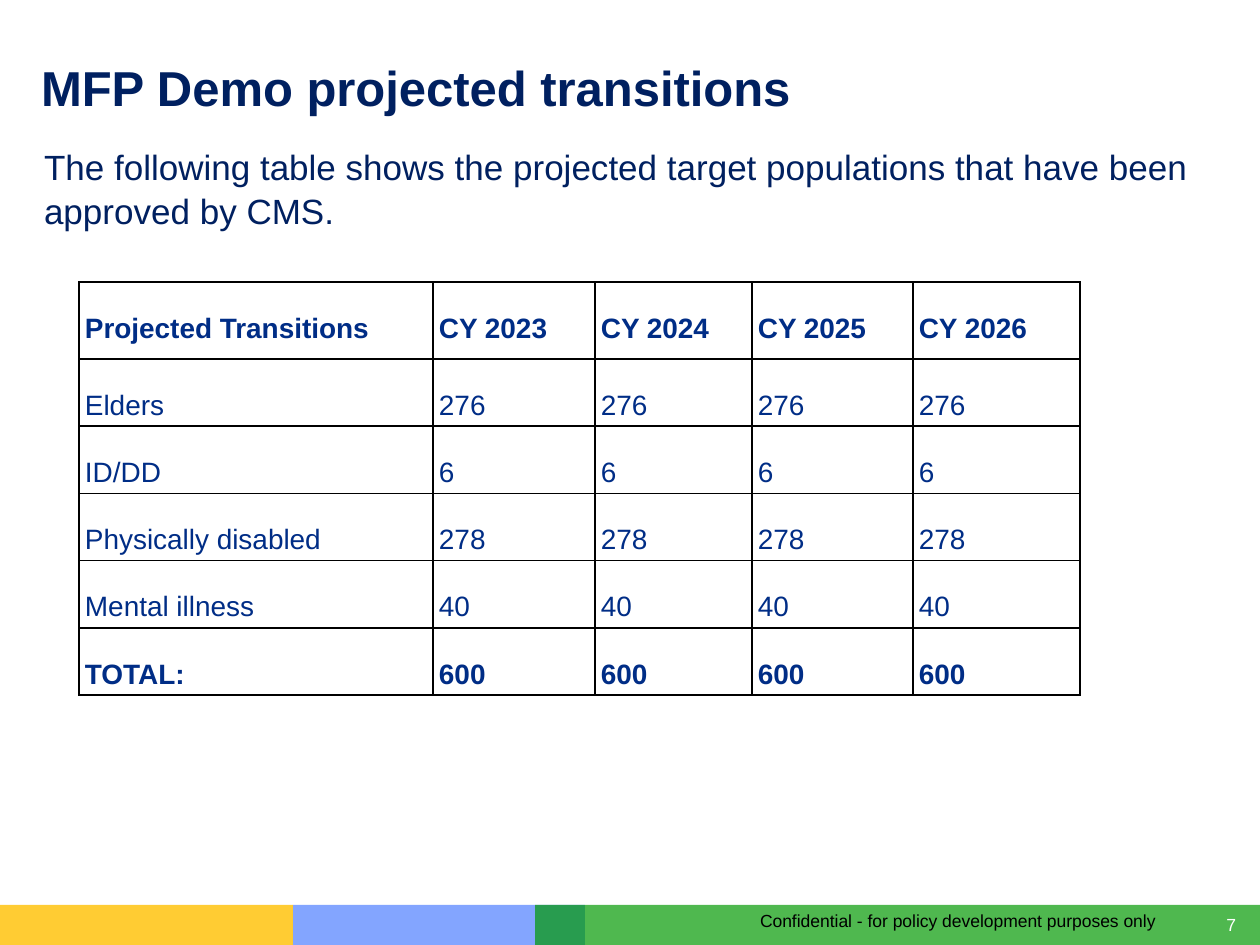
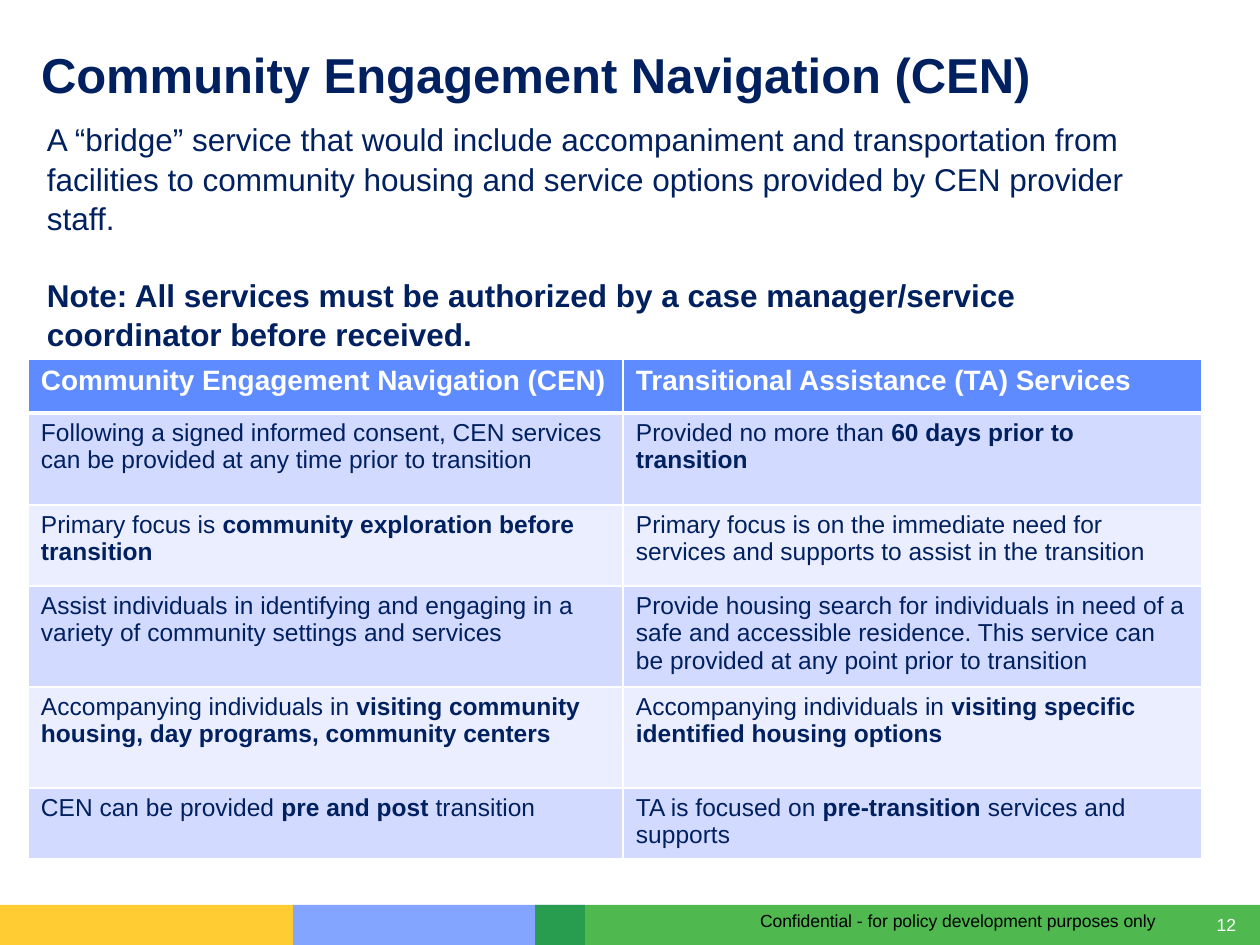
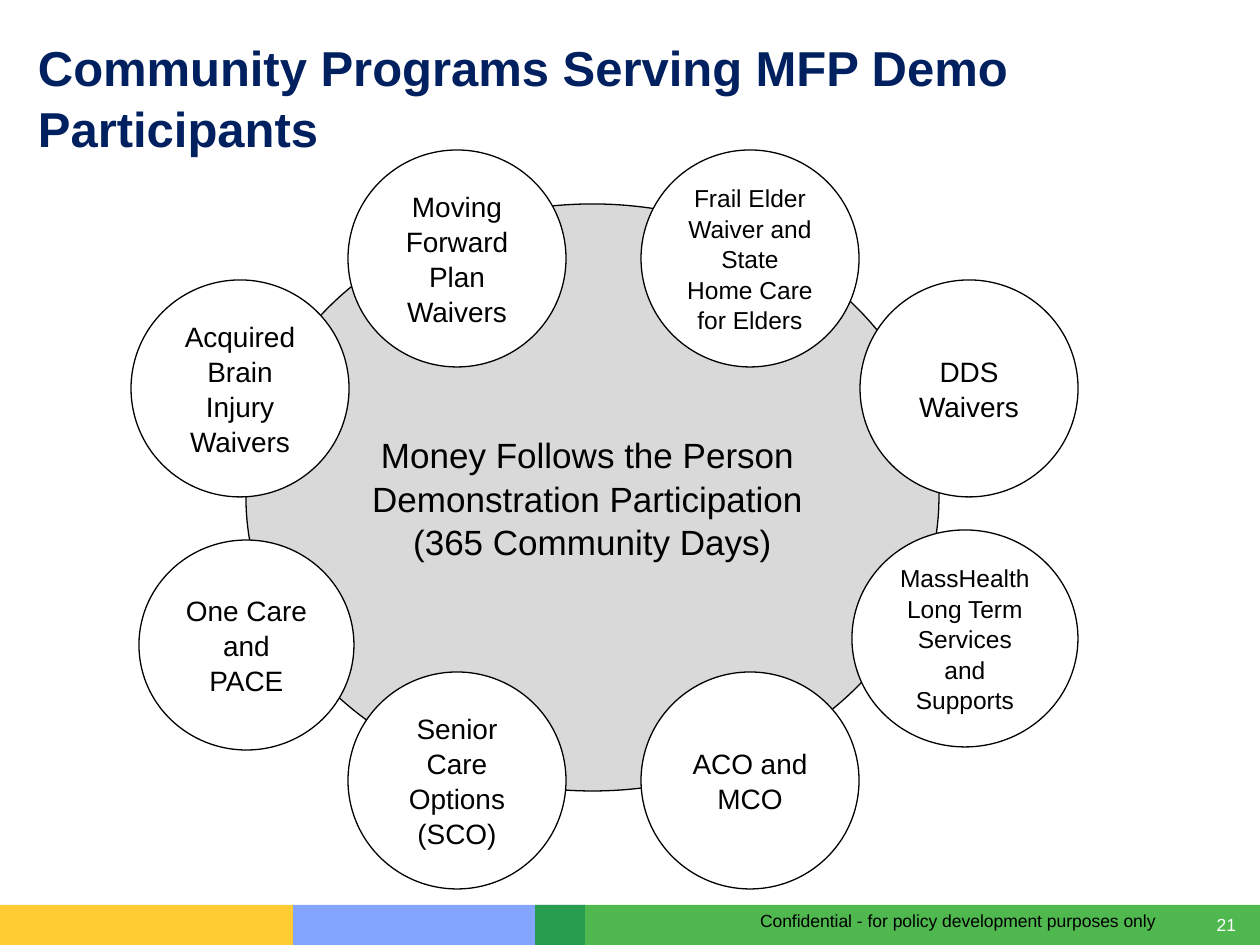
"""Build three slides on the MFP Demo: transitions, services and programs."""
from lxml import etree
from pptx import Presentation
from pptx.dml.color import RGBColor
from pptx.enum.shapes import MSO_SHAPE
from pptx.enum.text import MSO_ANCHOR, PP_ALIGN
from pptx.oxml.ns import qn
from pptx.util import Emu, Pt

RECTANGLE, ELLIPSE = MSO_SHAPE.RECTANGLE, MSO_SHAPE.OVAL
TOP, MIDDLE = MSO_ANCHOR.TOP, MSO_ANCHOR.MIDDLE
LEFT, CENTER, RIGHT = PP_ALIGN.LEFT, PP_ALIGN.CENTER, PP_ALIGN.RIGHT

NAVY = RGBColor(0x00, 0x20, 0x60)
ROYAL = RGBColor(0x00, 0x2D, 0x86)
BLUE = RGBColor(0x5E, 0x8B, 0xFF)
YELLOW = RGBColor(0xFF, 0xC0, 0x00)
GREEN = RGBColor(0x00, 0x99, 0x00)
PALE = RGBColor(0xD2, 0xDA, 0xFF)
PALER = RGBColor(0xEA, 0xEE, 0xFF)
GRAY = RGBColor(0xD9, 0xD9, 0xD9)
BLACK = RGBColor(0x00, 0x00, 0x00)
WHITE = RGBColor(0xFF, 0xFF, 0xFF)

FONT = "Arial"
PX_PER_INCH = 126
SLIDE_WIDTH, SLIDE_HEIGHT = 1260, 945
BAND_TOP, BAND_HEIGHT = 905, 40
LOOSE = 1.04
BODY_INSETS = (13, 8, 13, 6)
CELL_INSETS = (13, 6, 13, 6)

BANDS = [(293, 292, BLUE, 77), (0, 293, YELLOW, 80), (535, 725, GREEN, 69)]

YEARS = ["CY 2023", "CY 2024", "CY 2025", "CY 2026"]
TRANSITIONS = [("Elders", "276"), ("ID/DD", "6"), ("Physically disabled", "278"),
               ("Mental illness", "40"), ("*TOTAL:*", "*600*")]

SERVICES = [
    ("*Community Engagement Navigation (CEN)*",
     "*Transitional Assistance (TA) Services*"),
    ("Following a signed informed consent, CEN services can be provided at any time "
     "prior to transition",
     "Provided no more than *60 days prior to transition*"),
    ("Primary focus is *community exploration before transition*",
     "Primary focus is on the immediate need for services and supports to assist "
     "in the transition"),
    ("Assist individuals in identifying and engaging in a variety of community "
     "settings and services",
     "Provide housing search for individuals in need of a safe and accessible "
     "residence. This service can be provided at any point prior to transition"),
    ("Accompanying individuals in *visiting community housing, day programs, "
     "community centers*",
     "Accompanying individuals in *visiting specific identified housing options*"),
    ("CEN can be provided *pre and post* transition",
     "TA is focused on *pre-transition* services and supports"),
]

PROGRAMS = [
    ((139, 540, 215, 210), ["One Care ", "and PACE"], 16),
    ((348, 672, 218, 217), ["Senior Care Options (SCO)"], 16),
    ((641, 672, 218, 217), ["ACO and", "MCO"], 16),
    ((131, 280, 218, 217), ["Acquired Brain Injury Waivers"], 16),
    ((348, 150, 218, 217), ["Moving Forward Plan Waivers"], 16),
    ((641, 150, 218, 217), ["Frail Elder Waiver and State Home Care for Elders"], 14),
    ((860, 280, 218, 217), ["DDS Waivers"], 16),
    ((852, 530, 226, 217), ["MassHealth Long Term Services and Supports"], 14),
]


def px(length):
    """Turn pixels into EMU."""
    return Emu(round(length * 914400 / PX_PER_INCH))


def write_text(frame, lines, *, size, color=BLACK, align=LEFT, spacing=1.0, gap=0):
    """Fill a text frame; words between asterisks are bold."""
    for index, line in enumerate(lines):
        para = frame.add_paragraph() if index else frame.paragraphs[0]
        para.alignment = align
        para.line_spacing = spacing
        if index and gap:
            para.space_before = Pt(gap)
        for part, words in enumerate(line.split("*")):
            if words:
                span = para.add_run()
                span.text = words
                span.font.name = FONT
                span.font.size = Pt(size)
                span.font.bold = part % 2 == 1
                span.font.color.rgb = color


def set_insets(target, insets):
    """Set the left, top, right and bottom margins of a frame or cell."""
    (target.margin_left, target.margin_top,
     target.margin_right, target.margin_bottom) = map(px, insets)


def add_text(page, bounds, lines, *, insets=(0, 0, 0, 0), anchor=TOP, **style):
    """Add a wrapping text box."""
    frame = page.shapes.add_textbox(*map(px, bounds)).text_frame
    frame.word_wrap = True
    frame.vertical_anchor = anchor
    set_insets(frame, insets)
    write_text(frame, lines, **style)


def add_band(page, left, width, color, opacity):
    """Add one translucent block of the footer band."""
    band = page.shapes.add_shape(
        RECTANGLE, *map(px, (left, BAND_TOP, width, BAND_HEIGHT)))
    band.shadow.inherit = False
    band.fill.solid()
    band.fill.fore_color.rgb = color
    band.line.fill.background()
    tint = band.fill._xPr.find(qn("a:solidFill"))[0]
    etree.SubElement(tint, qn("a:alpha"), val=str(opacity * 1000))


def add_ellipse(page, bounds, lines, size, fill=WHITE, wrap=True):
    """Add an outlined ellipse with centred text."""
    ellipse = page.shapes.add_shape(ELLIPSE, *map(px, bounds))
    ellipse.shadow.inherit = False
    ellipse.fill.solid()
    ellipse.fill.fore_color.rgb = fill
    ellipse.line.color.rgb = BLACK
    ellipse.line.width = Pt(0.75)
    frame = ellipse.text_frame
    frame.word_wrap = wrap
    frame.vertical_anchor = MIDDLE
    write_text(frame, lines, size=size, align=CENTER, spacing=LOOSE)


def set_borders(cell, color, bottom=1):
    """Draw the four borders of a cell, 1 pt wide except the bottom."""
    properties = cell._tc.get_or_add_tcPr()
    for side, width in zip("LRTB", (1, 1, 1, bottom)):
        line = etree.SubElement(properties, qn(f"a:ln{side}"), w=str(Pt(width)))
        fill = etree.SubElement(line, qn("a:solidFill"))
        etree.SubElement(fill, qn("a:srgbClr"), val=str(color))


def add_grid(page, left, top, widths, heights):
    """Add a plain table and return it."""
    bounds = (left, top, sum(widths), sum(heights))
    table = page.shapes.add_table(
        len(heights), len(widths), *map(px, bounds)).table
    table.first_row = table.horz_banding = False
    for column, width in zip(table.columns, widths):
        column.width = px(width)
    for row, height in zip(table.rows, heights):
        row.height = px(height)
    return table


def fill_cell(cell, text, *, insets, border, bottom=1, fill=None, **style):
    """Write one cell with its borders and fill."""
    set_insets(cell, insets)
    set_borders(cell, border, bottom)
    if fill is None:
        cell.fill.background()
    else:
        cell.fill.solid()
        cell.fill.fore_color.rgb = fill
    write_text(cell.text_frame, [text], **style)


def add_page(deck, number, title, left, top, width, height):
    """Add a slide with its footer and title."""
    page = deck.slides.add_slide(deck.slide_layouts[6])
    for band in BANDS:
        add_band(page, *band)
    add_text(page, (1213, 914, 23, 21), [str(number)], anchor=MIDDLE,
             size=10, color=WHITE, align=RIGHT)
    add_text(page, (747, 904, 450, 34),
             ["Confidential - for policy development purposes only"],
             insets=CELL_INSETS, size=10)
    add_text(page, (left, top, width, height), [f"*{title}*"],
             insets=(0, 3, 0, 0), size=28, color=NAVY, spacing=LOOSE)
    return page


def add_transitions(deck):
    """Add the slide of projected transitions."""
    page = add_page(deck, 7, "MFP Demo projected transitions", 41, 52, 1077, 59)
    table = add_grid(page, 79, 282, [354, 162, 157, 161, 167], [77] + [67] * 5)
    rows = [["*Projected Transitions*"] + [f"*{year}*" for year in YEARS]]
    rows += [[group] + [count] * len(YEARS) for group, count in TRANSITIONS]
    for row, texts in zip(table.rows, rows):
        for cell, text in zip(row.cells, texts):
            fill_cell(cell, text, insets=(6, 0, 6, 0), border=BLACK,
                      size=16, color=ROYAL, spacing=2.0)
    add_text(page, (31, 136, 1215, 121),
             ["The following table shows the projected target populations that "
              "have been approved by CMS."],
             insets=BODY_INSETS, size=20, color=NAVY, spacing=LOOSE)


def add_services(deck):
    """Add the slide that compares CEN with TA services."""
    page = add_page(deck, 12, "Community Engagement Navigation (CEN)",
                    41, 39, 1077, 59)
    add_text(page, (34, 111, 1174, 240),
             ["A “bridge” service that would include accompaniment and "
              "transportation from facilities to community housing and service "
              "options provided by CEN provider staff.",
              "*Note: All services must be authorized by a case manager/service "
              "coordinator before received.*"],
             insets=BODY_INSETS, size=18, color=NAVY, spacing=LOOSE, gap=21.5)
    table = add_grid(page, 28, 359, [595, 579], [54, 92, 81, 101, 101, 71])
    for index, (row, texts) in enumerate(zip(table.rows, SERVICES)):
        if index == 0:
            style = {"fill": BLUE, "size": 16, "color": WHITE, "bottom": 3}
        else:
            style = {"fill": PALE if index % 2 else PALER, "size": 14, "color": NAVY}
        for cell, text in zip(row.cells, texts):
            fill_cell(cell, text, insets=CELL_INSETS, border=WHITE, **style)


def add_programs(deck):
    """Add the slide of programs around the demonstration."""
    page = add_page(deck, 21, "Community Programs Serving MFP Demo Participants",
                    38, 32, 1110, 118)
    add_ellipse(page, (246, 204, 693, 587),
                ["Money Follows the Person ", "Demonstration Participation ",
                 "(365 Community Days)"], 20, fill=GRAY, wrap=False)
    for program in PROGRAMS:
        add_ellipse(page, *program)


def main():
    """Build and save the deck."""
    deck = Presentation()
    deck.slide_width, deck.slide_height = px(SLIDE_WIDTH), px(SLIDE_HEIGHT)
    add_transitions(deck)
    add_services(deck)
    add_programs(deck)
    deck.save("out.pptx")


if __name__ == "__main__":
    main()
